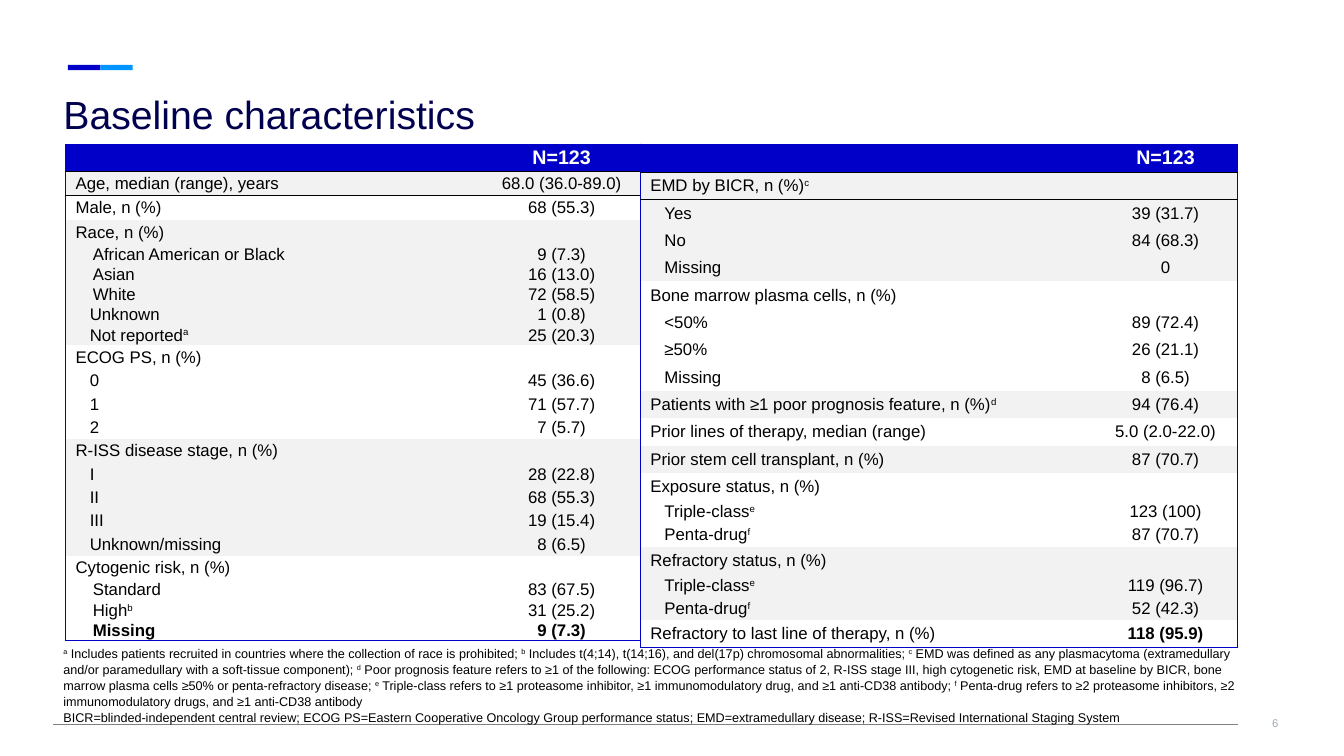
"""Build the baseline characteristics slide with its two tables."""
from dataclasses import dataclass

from lxml import etree
from pptx import Presentation
from pptx.dml.color import RGBColor
from pptx.enum.shapes import MSO_CONNECTOR, MSO_SHAPE
from pptx.enum.text import MSO_ANCHOR, PP_ALIGN
from pptx.oxml.ns import qn
from pptx.util import Emu, Inches, Pt

LEFT, CENTER, RIGHT = PP_ALIGN.LEFT, PP_ALIGN.CENTER, PP_ALIGN.RIGHT
TOP, MIDDLE, BOTTOM = MSO_ANCHOR.TOP, MSO_ANCHOR.MIDDLE, MSO_ANCHOR.BOTTOM
RECT, STRAIGHT = MSO_SHAPE.RECTANGLE, MSO_CONNECTOR.STRAIGHT
WIDTH, HEIGHT = Inches(13.33), Inches(7.5)
FONT = "Arial"
PLAIN = "{2D5ABB26-0587-4C30-8999-92F81FD0307C}"
COLORS = {"blue": "0000C9", "sky": "0095FF", "navy": "00004E", "black": "000000",
          "white": "FFFFFF", "band": "F2F2F2", "gray": "808080", "pale": "A1AAB1"}
INDENTS = (0.75, 1.8, 2.03)


@dataclass
class Row:
    label: str
    value: str = ""
    step: int = 0
    strong: str = ""


@dataclass
class Group:
    fill: str
    sub: float
    rows: tuple[Row, ...]
    rule: bool = False


@dataclass
class Grid:
    left: float
    cols: tuple[float, float]
    head: float
    base: float
    groups: tuple[Group, ...]


@dataclass
class Note:
    box: tuple[float, float, float, float]
    lines: tuple[str, ...]
    size: float
    color: str
    align: PP_ALIGN
    anchor: MSO_ANCHOR
    inset: tuple[float, float]
    pitch: float = 1.0


@dataclass
class Mark:
    left: float
    color: str


MARKS = (Mark(5.06, "blue"), Mark(7.47, "sky"))

GRIDS = (
    Grid(4.88, (31.06, 11.7), 3.33, 3.07, (
        Group("band", 3.07, (Row("Age, median (range), years", "68.0 (36.0-89.0)"),)),
        Group("white", 3.07, (Row("Male, n (%)", "68 (55.3)"),)),
        Group("band", 2.53, (
            Row("Race, n (%)"), Row("African American or Black", "9 (7.3)", 2),
            Row("Asian", "16 (13.0)", 2), Row("White", "72 (58.5)", 2),
            Row("Unknown", "1 (0.8)", 1), Row("Not reported^a", "25 (20.3)", 1))),
        Group("white", 3.07, (
            Row("ECOG PS, n (%)"), Row("0", "45 (36.6)", 1),
            Row("1", "71 (57.7)", 1), Row("2", "7 (5.7)", 1))),
        Group("band", 3.07, (
            Row("R-ISS disease stage, n (%)"), Row("I", "28 (22.8)", 1),
            Row("II", "68 (55.3)", 1), Row("III", "19 (15.4)", 1),
            Row("Unknown/missing", "8 (6.5)", 1))),
        Group("white", 2.53, (
            Row("Cytogenic risk, n (%)"), Row("Standard", "83 (67.5)", 2),
            Row("High^b", "31 (25.2)", 2), Row("Missing", "9 (7.3)", 2, "both"))))),
    Grid(47.64, (33.76, 10.65), 3.7, 3.62, (
        Group("band", 3.62, (
            Row("EMD by BICR, n (%)^c"), Row("Yes", "39 (31.7)", 1),
            Row("No", "84 (68.3)", 1), Row("Missing", "0", 1)), True),
        Group("white", 3.62, (
            Row("Bone marrow plasma cells, n (%)"), Row("<50%", "89 (72.4)", 1),
            Row("≥50%", "26 (21.1)", 1), Row("Missing", "8 (6.5)", 1))),
        Group("band", 3.62, (
            Row("Patients with ≥1 poor prognosis feature, n (%)^d", "94 (76.4)"),)),
        Group("white", 3.62, (
            Row("Prior lines of therapy, median (range)", "5.0 (2.0-22.0)"),)),
        Group("band", 3.62, (Row("Prior stem cell transplant, n (%)", "87 (70.7)"),)),
        Group("white", 3.07, (
            Row("Exposure status, n (%)"), Row("Triple-class^e", "123 (100)", 1),
            Row("Penta-drug^f", "87 (70.7)", 1))),
        Group("band", 3.07, (
            Row("Refractory status, n (%)"), Row("Triple-class^e", "119 (96.7)", 1),
            Row("Penta-drug^f", "52 (42.3)", 1))),
        Group("white", 3.62, (
            Row("Refractory to last line of therapy, n (%)", "118 (95.9)", 0, "value"),)))),
)

NOTES = (
    Note((90.1, 91.87, 6, 7.6), ("6",), 8, "pale", RIGHT, MIDDLE, (0.13, 0.13)),
    Note((3.98, 10.67, 86.27, 8.93), ("Baseline characteristics",),
         28, "navy", LEFT, TOP, (0.1, 0.1)),
    Note((3.98, 85.07, 90.02, 11.47), (
        "^a Includes patients recruited in countries where the collection of race is "
        "prohibited; ^b Includes t(4;14), t(14;16), and del(17p) chromosomal abnormalities; "
        "^c EMD was defined as any plasmacytoma (extramedullary and/or paramedullary with a "
        "soft-tissue component); ^d Poor prognosis feature refers to ≥1 of the following: "
        "ECOG performance status of 2, R-ISS stage III, high cytogenetic risk, EMD at "
        "baseline by BICR, bone marrow plasma cells ≥50% or penta-refractory disease; "
        "^e Triple-class refers to ≥1 proteasome inhibitor, ≥1 immunomodulatory drug, and "
        "≥1 anti-CD38 antibody; ^f Penta-drug refers to ≥2 proteasome inhibitors, "
        "≥2 immunomodulatory drugs, and ≥1 anti-CD38 antibody",
        "BICR=blinded-independent central review; ECOG PS=Eastern Cooperative Oncology "
        "Group performance status; EMD=extramedullary disease; R-ISS=Revised International "
        "Staging System"), 9, "black", LEFT, BOTTOM, (0.1, 0.05), 1.05),
)


def wide(share: float) -> Emu:
    return Emu(round(WIDTH * share / 100))


def tall(share: float) -> Emu:
    return Emu(round(HEIGHT * share / 100))


def paint(name: str) -> RGBColor:
    return RGBColor.from_string(COLORS[name])


def write(para, text: str, size: float, color: str, align: PP_ALIGN, bold: bool = False) -> None:
    para.alignment = align
    first, *rest = text.split("^")
    para.text = first
    for part in rest:
        for piece in filter(None, (part[:1], part[1:])):
            para.add_run().text = piece
        mark = para.runs[-2 if part[1:] else -1]
        mark._r.get_or_add_rPr().set("baseline", "30000")
    for run in para.runs:
        run.font.name, run.font.size, run.font.bold = FONT, Pt(size), bold
        run.font.color.rgb = paint(color)
    if not text:
        etree.SubElement(para._p, qn("a:endParaRPr"), sz=str(size * 100))


def edge(cell, sides: dict[str, str]) -> None:
    props = cell._tc.get_or_add_tcPr()
    for side in "LRTB":
        if side in sides:
            line = etree.SubElement(props, qn(f"a:ln{side}"), w=str(Pt(1)))
            fill = etree.SubElement(line, qn("a:solidFill"))
            etree.SubElement(fill, qn("a:srgbClr"), val=COLORS[sides[side]])


def draw_grid(slide, grid: Grid) -> None:
    items = [(Row("", "N=123", 0, "both"), "blue", grid.head, {"T": "blue", "B": "black"})]
    for group in grid.groups:
        for spot, row in enumerate(group.rows):
            rule = {"B": "black"} if group.rule and spot == 0 else {}
            items.append((row, group.fill, group.sub if row.step else grid.base, rule))
    items[1][3]["T"] = "black"
    items[-1][3]["B"] = "blue"
    frame = slide.shapes.add_table(len(items), 2, wide(grid.left), tall(19.07),
                                   wide(sum(grid.cols)), tall(sum(i[2] for i in items)))
    table = frame.table
    table.first_row = table.horz_banding = False
    table._tbl.tblPr.find(qn("a:tableStyleId")).text = PLAIN
    for col, share in zip(table.columns, grid.cols):
        col.width = wide(share)
    for index, (row, fill, share, rules) in enumerate(items):
        table.rows[index].height = tall(share)
        size, color = (12, "black") if index else (14, "white")
        pad = Inches(0 if row.step else 0.02)
        for cell, text, side in zip(table.rows[index].cells, (row.label, row.value), "LR"):
            edge(cell, {side: "blue", **rules})
            cell.fill.solid()
            cell.fill.fore_color.rgb = paint(fill)
            cell.vertical_anchor = MIDDLE
            cell.margin_top = cell.margin_bottom = pad
            cell.margin_left = wide(INDENTS[row.step] if side == "L" else 0.3)
            cell.margin_right = wide(0.3)
            bold = row.strong == "both" or (row.strong == "value" and side == "R")
            write(cell.text_frame.paragraphs[0], text, size, color,
                  LEFT if side == "L" else CENTER, bold)


def draw_note(slide, note: Note) -> None:
    left, top, width, height = note.box
    frame = slide.shapes.add_textbox(wide(left), tall(top), wide(width), tall(height)).text_frame
    frame.word_wrap, frame.vertical_anchor = True, note.anchor
    frame.margin_left = frame.margin_right = Inches(note.inset[0])
    frame.margin_top = frame.margin_bottom = Inches(note.inset[1])
    frame.text = "\n".join(note.lines)
    for para, line in zip(frame.paragraphs, note.lines):
        write(para, line, note.size, note.color, note.align)
        para.line_spacing = note.pitch


def draw_mark(slide, mark: Mark) -> None:
    shape = slide.shapes.add_shape(RECT, wide(mark.left), tall(8.6), wide(2.41), tall(0.67))
    shape.shadow.inherit = False
    shape.fill.solid()
    shape.fill.fore_color.rgb = paint(mark.color)
    shape.line.fill.background()


def draw_rule(slide) -> None:
    rule = slide.shapes.add_connector(STRAIGHT, wide(3.98), tall(95.87), wide(92.12), tall(95.87))
    rule.line.color.rgb, rule.line.width = paint("gray"), Pt(0.5)
    etree.SubElement(rule._element.spPr, qn("a:effectLst"))


def main() -> None:
    deck = Presentation()
    deck.slide_width, deck.slide_height = WIDTH, HEIGHT
    slide = deck.slides.add_slide(deck.slide_layouts[6])
    for mark in MARKS:
        draw_mark(slide, mark)
    draw_rule(slide)
    for note in NOTES:
        draw_note(slide, note)
    for grid in GRIDS:
        draw_grid(slide, grid)
    deck.save("out.pptx")


if __name__ == "__main__":
    main()
